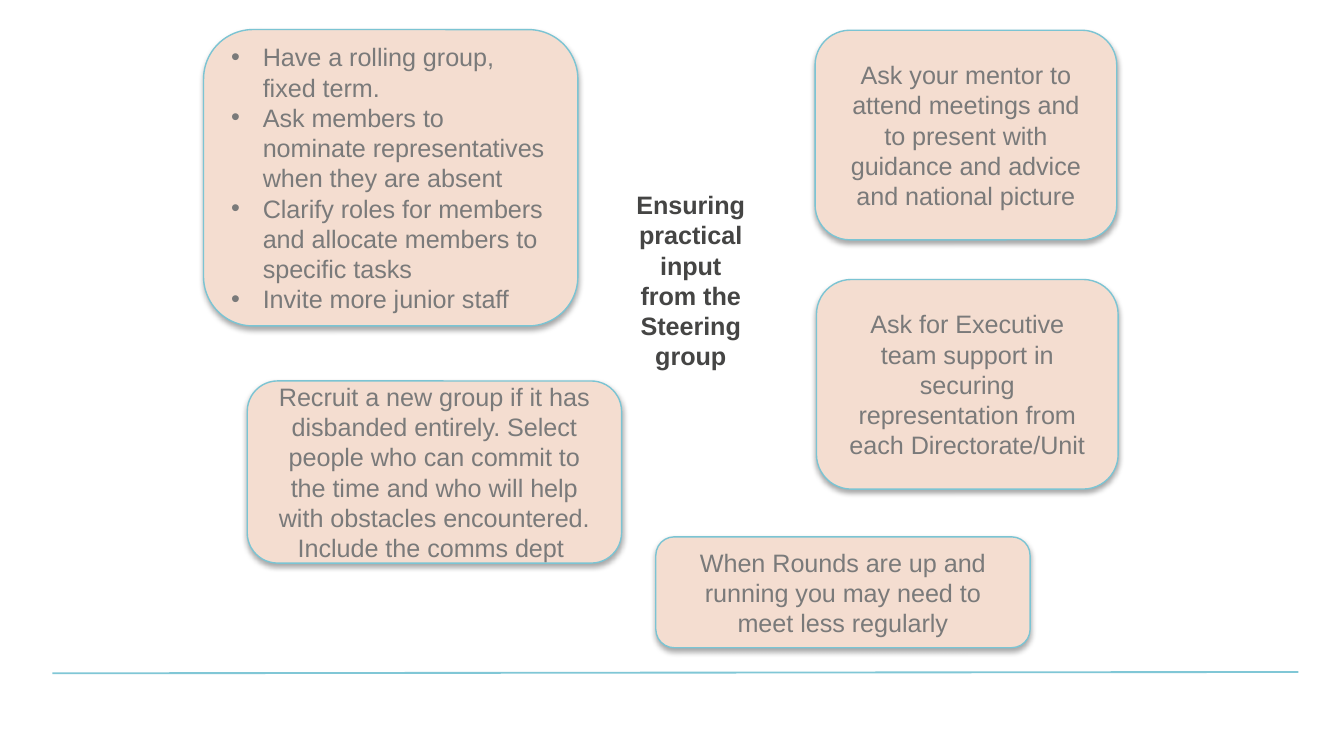
from lxml.etree import SubElement
from pptx import Presentation
from pptx.dml.color import RGBColor
from pptx.enum.shapes import MSO_CONNECTOR, MSO_SHAPE
from pptx.enum.text import MSO_ANCHOR, PP_ALIGN
from pptx.oxml.ns import qn
from pptx.util import Pt

EMU_PER_PX = 4572  # 200 px to the inch
SLIDE_WIDTH, SLIDE_HEIGHT = 2000, 1125
BULLET_INDENT = 47

PEACH = RGBColor(0xF4, 0xDD, 0xD0)
CARD_BORDER = RGBColor(0x7B, 0xC4, 0xD3)
RULE_BLUE = RGBColor(0x80, 0xC7, 0xD6)
DARK_GREY = RGBColor(0x45, 0x45, 0x44)
GREY = RGBColor(0x7A, 0x7A, 0x7A)

# Each card: box (left, top, width, height) and its paragraphs
CARDS = [
    ((303, 44, 557, 441), [
        "Have a rolling group, fixed term.",
        "Ask members to nominate representatives when they are absent",
        "Clarify roles for members and allocate members to specific tasks",
        "Invite more junior staff",
    ]),
    ((368, 567, 557, 271), [
        "Recruit a new group if it has disbanded entirely. Select people who can "
        "commit to the time and who will help with obstacles encountered. "
        "Include the comms dept ",
    ]),
    ((1213, 45, 449, 312), [
        "Ask your mentor to attend meetings and to present with guidance and "
        "advice and national picture",
    ]),
    ((976, 799, 557, 165), [
        "When Rounds are up and running you may need to meet less regularly",
    ]),
    ((1215, 416, 449, 312), [
        "Ask for Executive team support in securing representation from each "
        "Directorate/Unit",
    ]),
]


def px(*lengths):
    return [length * EMU_PER_PX for length in lengths]


def set_font(paragraph, color, bold=False):
    font = paragraph.font
    font.name = "Arial"
    font.size = Pt(13.5)
    font.bold = bold
    font.color.rgb = color


def add_bullet(paragraph):
    properties = paragraph._p.get_or_add_pPr()
    indent, = px(BULLET_INDENT)
    properties.set("marL", str(indent))
    properties.set("indent", str(-indent))
    SubElement(properties, qn("a:buFont"), typeface="Arial")
    SubElement(properties, qn("a:buChar"), char="•")


def add_soft_shadow(shape):
    shape.shadow.inherit = False
    effects = shape._element.spPr.find(qn("a:effectLst"))
    shadow = SubElement(effects, qn("a:outerShdw"), blurRad=str(Pt(3.1)),
                        dist=str(Pt(1.8)), dir="5400000", rotWithShape="0")
    color = SubElement(shadow, qn("a:srgbClr"), val="000000")
    SubElement(color, qn("a:alpha"), val="35000")


def add_footer_rule(slide, start, end):
    rule = slide.shapes.add_connector(MSO_CONNECTOR.STRAIGHT, *px(*start, *end))
    rule.line.color.rgb = RULE_BLUE
    rule.line.width = Pt(1)
    SubElement(rule._element.spPr, qn("a:effectLst"))


def add_heading(slide, box, text):
    frame = slide.shapes.add_textbox(*px(*box)).text_frame
    frame.word_wrap = True
    frame.margin_left = frame.margin_right = 0
    frame.margin_top = frame.margin_bottom = 0
    paragraph = frame.paragraphs[0]
    paragraph.text = text
    paragraph.alignment = PP_ALIGN.CENTER
    set_font(paragraph, DARK_GREY, bold=True)


def add_card(slide, box, texts):
    card = slide.shapes.add_shape(MSO_SHAPE.ROUNDED_RECTANGLE, *px(*box))
    card.fill.solid()
    card.fill.fore_color.rgb = PEACH
    card.line.color.rgb = CARD_BORDER
    card.line.width = Pt(0.75)
    add_soft_shadow(card)

    # Several paragraphs form a bulleted list; a single one is centred
    frame = card.text_frame
    frame.word_wrap = True
    frame.vertical_anchor = MSO_ANCHOR.MIDDLE
    frame.text = "\n".join(texts)
    bulleted = len(texts) > 1
    for paragraph in frame.paragraphs:
        paragraph.alignment = PP_ALIGN.LEFT if bulleted else PP_ALIGN.CENTER
        if bulleted:
            add_bullet(paragraph)
        set_font(paragraph, GREY)


def main():
    presentation = Presentation()
    presentation.slide_width, presentation.slide_height = px(SLIDE_WIDTH, SLIDE_HEIGHT)
    slide = presentation.slides.add_slide(presentation.slide_layouts[6])

    add_footer_rule(slide, (78, 1002), (1932, 1000))
    add_heading(slide, (942, 282, 172, 268),
                "Ensuring practical input from the Steering group")
    for box, texts in CARDS:
        add_card(slide, box, texts)

    presentation.save("out.pptx")


if __name__ == "__main__":
    main()
